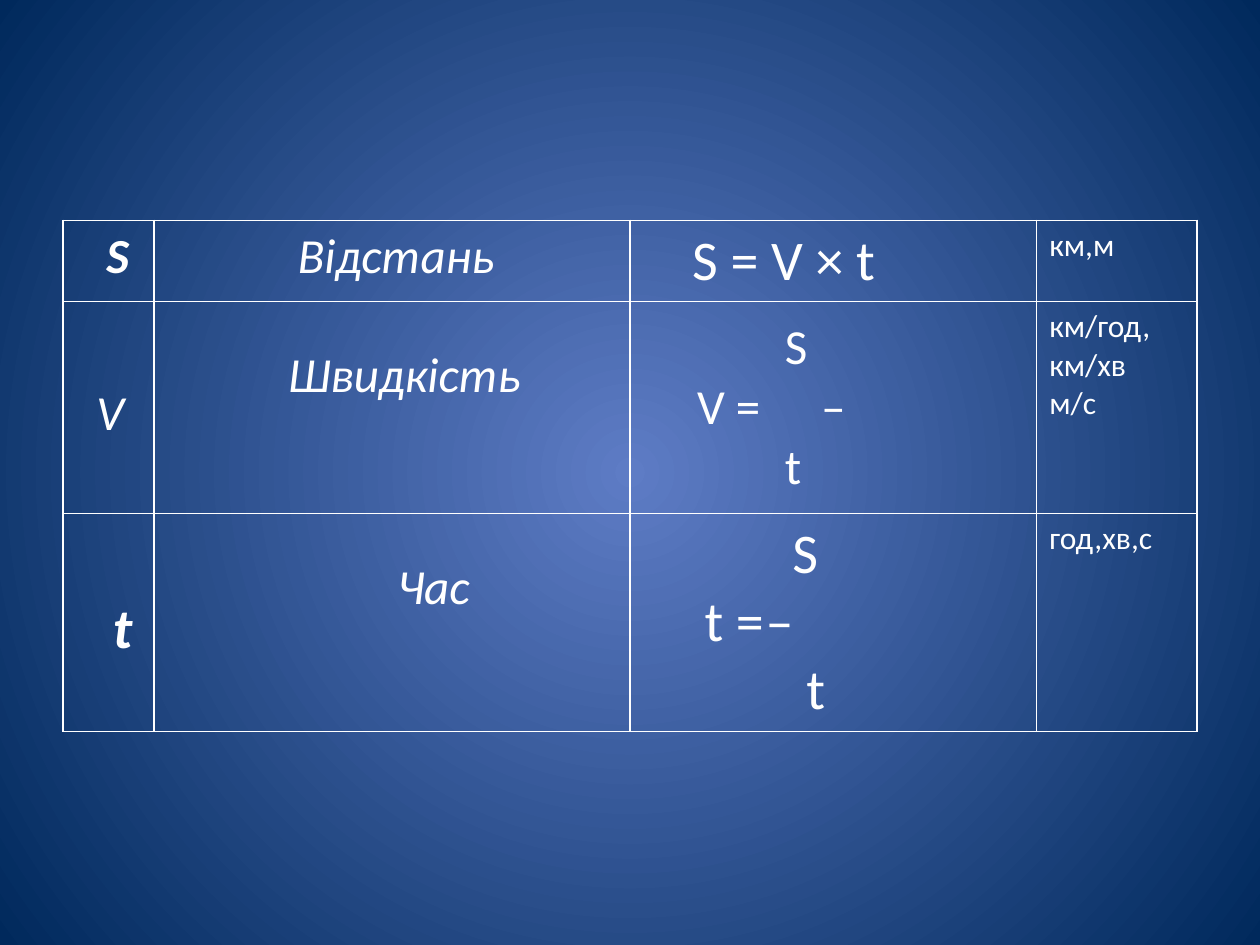
"""Builds a slide with a table of distance, speed and time formulas."""
from lxml import etree
from pptx import Presentation
from pptx.dml.color import RGBColor
from pptx.enum.text import MSO_ANCHOR
from pptx.oxml.ns import qn
from pptx.util import Cm, Pt

TOP, MIDDLE = MSO_ANCHOR.TOP, MSO_ANCHOR.MIDDLE
WHITE = RGBColor(0xFF, 0xFF, 0xFF)
CENTRE_BLUE = RGBColor(0x5E, 0x7C, 0xC5)
EDGE_BLUE = RGBColor(0x00, 0x29, 0x5C)

COLUMN_WIDTHS = (1.83, 9.6, 8.2, 3.23)
ROW_HEIGHTS = (1.63, 4.27, 4.39)
TABLE_LEFT, TABLE_TOP = 1.27, 4.44
BORDER_WIDTH = Pt(1)

SYMBOL = {"size": Pt(28), "bold": True, "italic": True}
LIGHT_SYMBOL = {"size": Pt(28), "bold": False, "italic": True}
LARGE_SYMBOL = {"size": Pt(32), "bold": True, "italic": True}
QUANTITY = {"size": Pt(28), "bold": False, "italic": True}
FORMULA = {"size": Pt(28), "bold": False, "italic": False}
LARGE_FORMULA = {"size": Pt(32), "bold": False, "italic": False}
UNIT = {"size": Pt(18), "bold": False, "italic": False}

# cell: format, top margin, anchor, lines of (text, indent, tab stop)
ROWS = [
    [
        (SYMBOL, 0.13, TOP, [("S", 0.62, None)]),
        (QUANTITY, 0.13, TOP, [("Відстань", 2.65, None)]),
        (LARGE_FORMULA, 0.13, TOP, [("S = V × t", 1.0, None)]),
        (UNIT, 0.13, TOP, [("км,м", 0, None)]),
    ],
    [
        (LIGHT_SYMBOL, 1.66, TOP, [("V", 0.42, None)]),
        (QUANTITY, 0.89, TOP, [("Швидкість", 2.45, None)]),
        (FORMULA, 0.13, MIDDLE,
         [("S", 2.87, None), ("V =\t ̶", 1.1, 2.93), ("t", 2.87, None)]),
        (UNIT, 0.13, TOP,
         [("км/год,", 0, None), ("км/хв", 0, None), ("м/с", 0, None)]),
    ],
    [
        (LARGE_SYMBOL, 1.66, TOP, [("t", 0.75, None)]),
        (QUANTITY, 0.89, TOP, [("Час", 4.65, None)]),
        (LARGE_FORMULA, 0.13, TOP,
         [("S", 3.02, None), ("t =\t ̶", 1.25, 3.33), ("t", 3.3, None)]),
        (UNIT, 0.13, TOP, [("год,хв,с", 0, None)]),
    ],
]


def paint_background(slide):
    fill = slide.background.fill
    fill.gradient()
    for stop, colour in zip(fill.gradient_stops, (CENTRE_BLUE, EDGE_BLUE)):
        stop.color.rgb = colour
    gradient = slide._element.find(".//" + qn("a:gradFill"))
    gradient.remove(gradient.find(qn("a:lin")))
    circle = etree.SubElement(gradient, qn("a:path"), path="circle")
    sides = dict.fromkeys("ltrb", "50000")
    etree.SubElement(circle, qn("a:fillToRect"), **sides)


def draw_borders(cell):
    properties = cell._tc.get_or_add_tcPr()
    for position, side in enumerate(("lnL", "lnR", "lnT", "lnB")):
        border = etree.Element(qn(f"a:{side}"), w=str(BORDER_WIDTH))
        paint = etree.SubElement(border, qn("a:solidFill"))
        etree.SubElement(paint, qn("a:srgbClr"), val=str(WHITE))
        properties.insert(position, border)


def write_line(paragraph, text, indent, tab_stop, text_format):
    properties = paragraph._p.get_or_add_pPr()
    properties.set("marL", str(Cm(indent)))
    properties.set("indent", "0")
    if tab_stop:
        tabs = etree.SubElement(properties, qn("a:tabLst"))
        etree.SubElement(tabs, qn("a:tab"), pos=str(Cm(tab_stop)), algn="l")
    run = paragraph.add_run()
    run.text = text
    for name, value in {"name": "Calibri", **text_format}.items():
        setattr(run.font, name, value)
    run.font.color.rgb = WHITE


def fill_cell(cell, text_format, top_margin, anchor, lines):
    cell.fill.background()
    cell.margin_top = Cm(top_margin)
    cell.vertical_anchor = anchor
    draw_borders(cell)
    frame = cell.text_frame
    for number, line in enumerate(lines):
        paragraph = frame.add_paragraph() if number else frame.paragraphs[0]
        write_line(paragraph, *line, text_format)


def main():
    deck = Presentation()
    deck.slide_width, deck.slide_height = Cm(25.4), Cm(19.05)
    slide = deck.slides.add_slide(deck.slide_layouts[6])
    paint_background(slide)
    formulas = slide.shapes.add_table(
        len(ROW_HEIGHTS), len(COLUMN_WIDTHS), Cm(TABLE_LEFT), Cm(TABLE_TOP),
        Cm(sum(COLUMN_WIDTHS)), Cm(sum(ROW_HEIGHTS))).table
    formulas.first_row = formulas.horz_banding = False
    for column, width in zip(formulas.columns, COLUMN_WIDTHS):
        column.width = Cm(width)
    for row, height, contents in zip(formulas.rows, ROW_HEIGHTS, ROWS):
        row.height = Cm(height)
        for cell, content in zip(row.cells, contents):
            fill_cell(cell, *content)
    deck.save("out.pptx")


if __name__ == "__main__":
    main()
